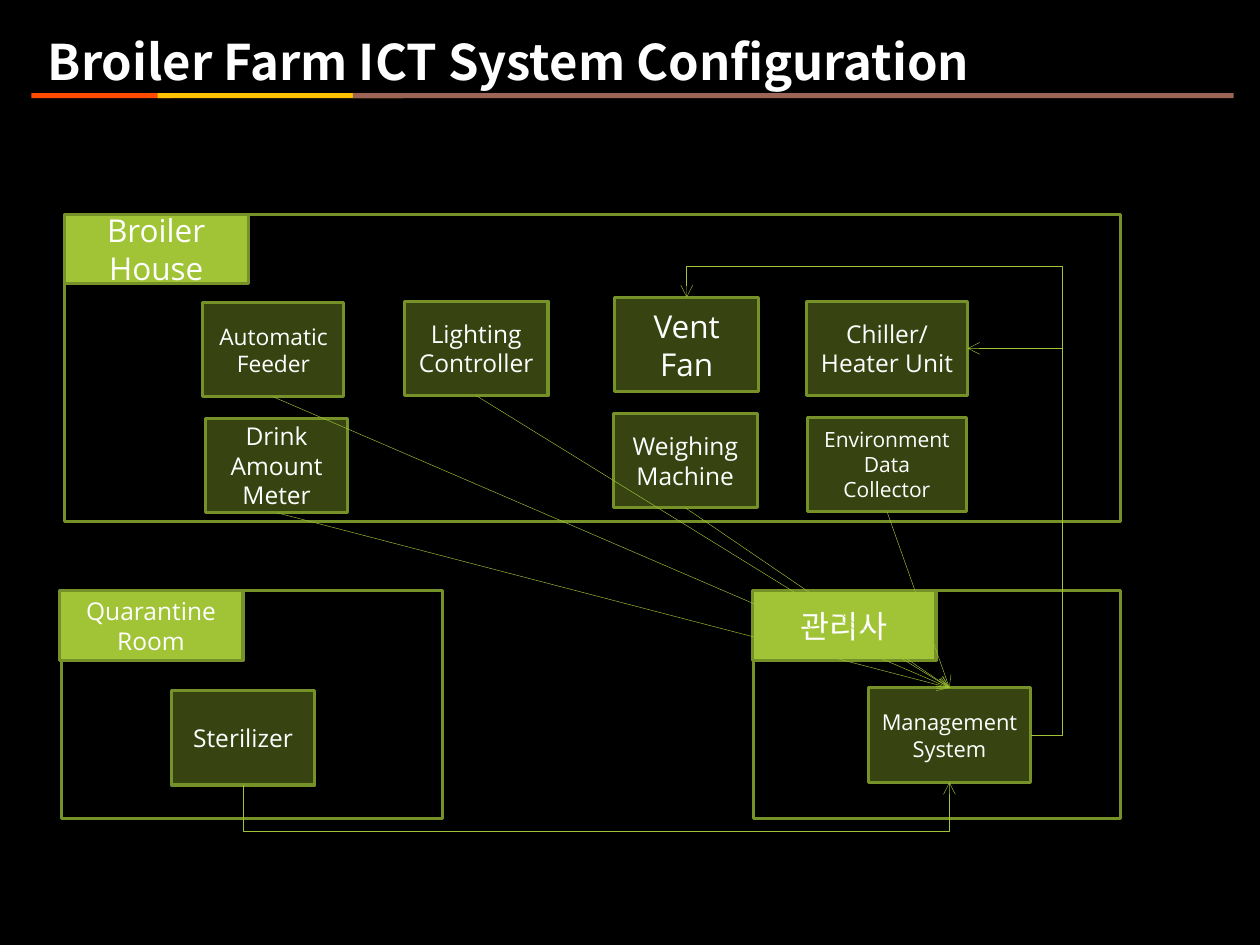
from pptx import Presentation
from pptx.dml.color import RGBColor
from pptx.enum.shapes import MSO_CONNECTOR, MSO_SHAPE
from pptx.enum.text import MSO_ANCHOR, MSO_AUTO_SIZE, PP_ALIGN
from pptx.oxml.ns import qn
from pptx.util import Pt
from lxml.etree import SubElement

BLACK = RGBColor(0x00, 0x00, 0x00)
WHITE = RGBColor(0xFF, 0xFF, 0xFF)
GREEN = RGBColor(0xA0, 0xC4, 0x35)
DARK_GREEN = RGBColor(0x76, 0x91, 0x27)
ORANGE = RGBColor(0xFF, 0x4B, 0x00)
YELLOW = RGBColor(0xFF, 0xC0, 0x00)
BROWN = RGBColor(0x9B, 0x64, 0x55)

# Content: lengths in points
TITLE = "Broiler Farm ICT System Configuration"
STRIPES = [(18, 80, ORANGE), (90, 140.4, YELLOW), (201.6, 503.3, BROWN)]
ROOMS = [  # left, top, width, height
    (36.7, 122.4, 603.4, 175.7),
    (35.3, 337.7, 217.4, 130.3),
    (430.6, 337.7, 209.5, 130.3),
]
ROOM_LABELS = [  # text, size, left, top
    ("Broiler House", 18, 36.7, 122.4),
    ("Quarantine Room", 14, 33.8, 337.7),
    ("관리사", 18, 429.8, 337.7),
]
DEVICES = {  # name: text, size, left, top, width
    "feeder": ("Automatic Feeder", 13, 115.9, 172.8, 80.6),
    "lighting": ("Lighting Controller", 14, 231.1, 172.1, 82.1),
    "fan": ("Vent Fan", 18, 351.4, 169.9, 82.1),
    "chiller": ("Chiller/ Heater Unit", 14, 460.8, 172.1, 92.2),
    "drink": ("Drink Amount Meter", 14, 117.4, 239, 81.4),
    "weighing": ("Weighing Machine", 14, 350.6, 236.2, 82.1),
    "environment": ("Environment Data Collector", 12, 461.5, 238.3, 90.7),
    "sterilizer": ("Sterilizer", 14, 97.9, 394.6, 82.1),
    "management": ("Management System", 12.5, 496.1, 393.1, 92.9),
}
SENSORS = ["environment", "weighing", "drink", "feeder", "lighting"]
LABEL_W, LABEL_H, DEVICE_H = 105.1, 39.6, 54
TOP, BOTTOM = 0, 2  # connection sites of a rectangle
BUS_X, FAN_BUS_Y, STERILIZER_BUS_Y = 607, 152, 475.2

prs = Presentation()
prs.slide_width, prs.slide_height = Pt(720), Pt(540)
s = prs.slides.add_slide(prs.slide_layouts[5])
s.background.fill.solid()
s.background.fill.fore_color.rgb = BLACK


def add_rect(x, y, w, h, fill=None, line=None, alpha=None):
    sp = s.shapes.add_shape(MSO_SHAPE.RECTANGLE, Pt(x), Pt(y), Pt(w), Pt(h))
    sp.shadow.inherit = False
    if fill is None:
        sp.fill.background()
    else:
        sp.fill.solid()
        sp.fill.fore_color.rgb = fill
    if alpha:
        color = sp.fill._xPr.find(qn("a:solidFill"))[0]
        SubElement(color, qn("a:alpha"), val=str(alpha * 1000))
    if line is None:
        sp.line.fill.background()
    else:
        sp.line.color.rgb = line
        sp.line.width = Pt(1.75)
    return sp


def write(sp, text, size, font="Open Sans", align=PP_ALIGN.CENTER, bold=False):
    tf = sp.text_frame
    tf.word_wrap = True
    tf.auto_size = MSO_AUTO_SIZE.NONE
    tf.vertical_anchor = MSO_ANCHOR.MIDDLE
    p = tf.paragraphs[0]
    p.alignment = align
    r = p.add_run()
    r.text = text
    r.font.size, r.font.bold, r.font.name = Pt(size), bold, font
    r.font.color.rgb = WHITE
    SubElement(r.font._element, qn("a:ea"), typeface=font)


def add_arrow(kind, start, end):
    c = s.shapes.add_connector(kind, *(Pt(v) for v in start + end))
    c.line.color.rgb = GREEN
    c.line.width = Pt(0.25)
    SubElement(c.line._get_or_add_ln(), qn("a:tailEnd"), type="arrow")
    SubElement(c._element.spPr, qn("a:effectLst"))
    return c


def add_elbow(start, end, *bends, turned=False):
    """Elbow arrow; bends are fractions of the way from start to end."""
    if turned:  # leaves vertically: lay it out sideways, then rotate
        cx, cy = (start[0] + end[0]) / 2, (start[1] + end[1]) / 2
        start, end = [(cx + y - cy, cy - x + cx) for x, y in (start, end)]
    c = add_arrow(MSO_CONNECTOR.ELBOW, start, end)
    if turned:
        c._element.spPr.find(qn("a:xfrm")).set("rot", "5400000")
    geom = c._element.spPr.find(qn("a:prstGeom"))
    geom.set("prst", f"bentConnector{len(bends) + 2}")
    guides = geom.find(qn("a:avLst"))
    if guides is None:
        guides = SubElement(geom, qn("a:avLst"))
    for i, bend in enumerate(bends, 1):
        name = f"adj{i}"
        SubElement(guides, qn("a:gd"), name=name, fmla=f"val {round(bend * 100000)}")


# Title and stripes
for x, w, color in STRIPES:
    add_rect(x, 53.3, w, 2.9, color)
title = s.shapes.title
title.left, title.top, title.width, title.height = Pt(20.2), Pt(15.1), Pt(663.1), Pt(38.9)
write(title, TITLE, 28, "Noto Sans CJK KR", PP_ALIGN.LEFT, True)

# Rooms and their labels
for room in ROOMS:
    add_rect(*room, line=DARK_GREEN)
for text, size, x, y in ROOM_LABELS:
    write(add_rect(x, y, LABEL_W, LABEL_H, GREEN, DARK_GREEN), text, size)

# Devices
boxes = {}
for name, (text, size, x, y, w) in DEVICES.items():
    boxes[name] = add_rect(x, y, w, DEVICE_H, GREEN, DARK_GREEN, alpha=35)
    write(boxes[name], text, size)

# Sensor data into the management system
for name in SENSORS:
    c = add_arrow(MSO_CONNECTOR.STRAIGHT, (0, 0), (0, 0))
    c.begin_connect(boxes[name], BOTTOM)
    c.end_connect(boxes["management"], TOP)


def anchor(name, fx, fy):
    _, _, x, y, w = DEVICES[name]
    return x + fx * w, y + fy * DEVICE_H


def fraction(a, b, v):
    return (v - a) / (b - a)


# Sterilizer link and control lines
start, end = anchor("sterilizer", 0.5, 1), anchor("management", 0.5, 1)
add_elbow(start, end, fraction(start[1], end[1], STERILIZER_BUS_Y), turned=True)
start = anchor("management", 1, 0.5)
end = anchor("chiller", 1, 0.5)
add_elbow(start, end, fraction(start[0], end[0], BUS_X))
end = anchor("fan", 0.5, 0)
add_elbow(start, end, fraction(start[0], end[0], BUS_X), fraction(start[1], end[1], FAN_BUS_Y))

prs.save("out.pptx")
